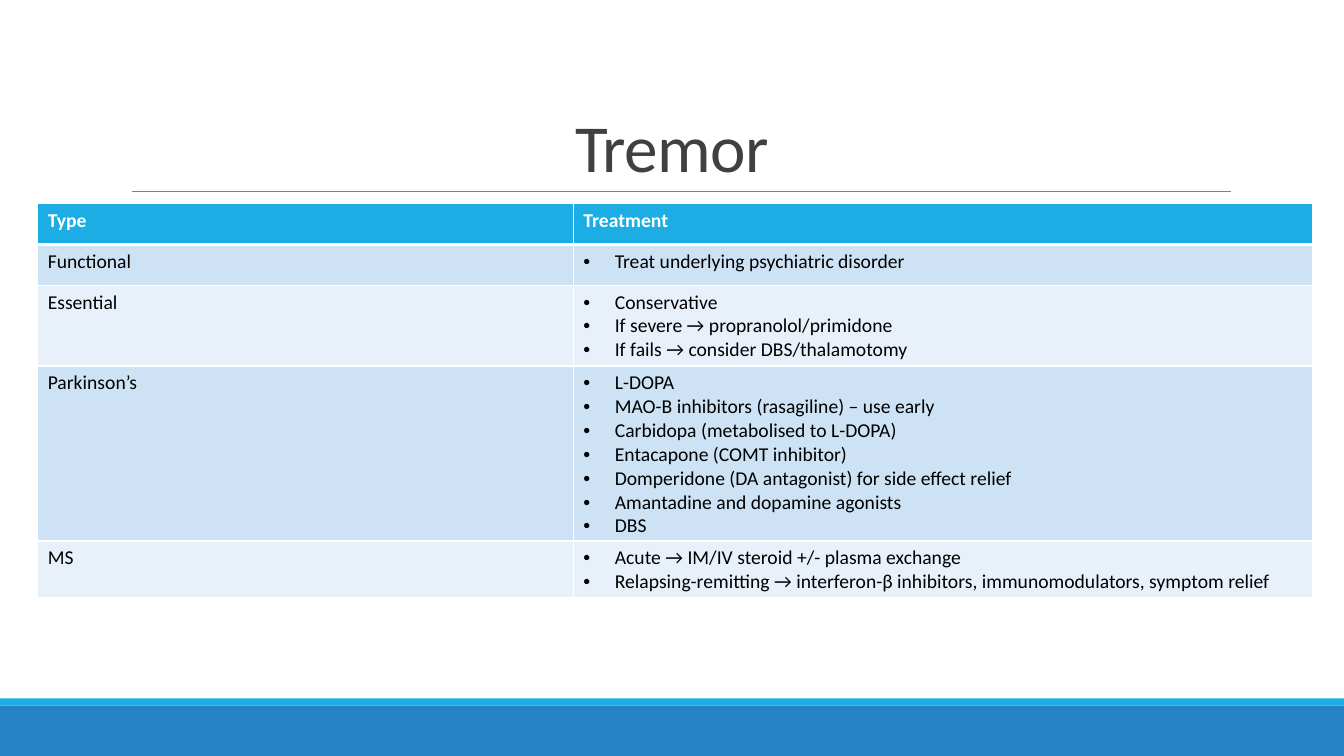
from dataclasses import dataclass

from pptx import Presentation
from pptx import util as u
from pptx.dml.color import RGBColor
from pptx.enum import shapes, text
from pptx.oxml.ns import qn
from lxml import etree


@dataclass
class Theme:
    font: str = "Calibri"
    title: int = 48
    body: int = 14
    dark: str = "404040"
    ink: str = "000000"
    pale: str = "FFFFFF"
    rule: str = "808080"
    head: str = "1CADE4"
    foot: str = "2683C6"
    bands: tuple = ("CDE3F5", "E8F1FA")


HEADS = ["Type", "Treatment"]
CARE = {
    "Functional": ["Treat underlying psychiatric disorder"],
    "Essential": [
        "Conservative",
        "If severe → propranolol/primidone",
        "If fails → consider DBS/thalamotomy",
    ],
    "Parkinson’s": [
        "L-DOPA",
        "MAO-B inhibitors (rasagiline) – use early",
        "Carbidopa (metabolised to L-DOPA)",
        "Entacapone (COMT inhibitor)",
        "Domperidone (DA antagonist) for side effect relief",
        "Amantadine and dopamine agonists",
        "DBS",
    ],
    "MS": [
        "Acute → IM/IV steroid +/- plasma exchange",
        "Relapsing-remitting → interferon-β inhibitors, immunomodulators, symptom relief",
    ],
}


def color(code):
    return RGBColor.from_string(code)


def add(parent, tag, **attrs):
    return etree.SubElement(parent, qn(tag), attrs)


def write(frame, lines, font, size, ink, bold=False, align=None,
          space=None, track=None, bullet=False):
    """Put one paragraph per line; track is letter spacing in 1/100 pt."""
    for i, line in enumerate(lines):
        para = frame.add_paragraph() if i else frame.paragraphs[0]
        para.alignment = align
        para.line_spacing = space
        run = para.add_run()
        run.text = line
        run.font.name, run.font.size = font, u.Pt(size)
        run.font.bold, run.font.color.rgb = bold, color(ink)
        if track:
            run.font._element.set("spc", str(track))
        if bullet:
            props = para._p.get_or_add_pPr()
            dent = u.Cm(0.79)
            props.set("marL", str(dent))
            props.set("indent", str(-dent))
            add(props, "a:buFont", typeface="Arial")
            add(props, "a:buChar", char="•")


def border(cell, ink, top, low):
    """Draw all four sides; top and low are widths in points."""
    props = cell._tc.get_or_add_tcPr()
    for side, width in zip("LRTB", (1, 1, top, low)):
        line = add(props, f"a:ln{side}", w=str(u.Pt(width)))
        add(add(line, "a:solidFill"), "a:srgbClr", val=ink)


class Page:
    def __init__(self, deck, theme):
        self.theme = theme
        self.slide = deck.slides.add_slide(deck.slide_layouts[6])
        self.shapes = self.slide.shapes

    def bar(self, left, top, width, height, fill):
        box = self.shapes.add_shape(
            shapes.MSO_SHAPE.RECTANGLE,
            u.Cm(left), u.Cm(top), u.Cm(width), u.Cm(height))
        box.shadow.inherit = False
        box.fill.solid()
        box.fill.fore_color.rgb = color(fill)
        box.line.fill.background()

    def rule(self, left, right, top):
        line = self.shapes.add_connector(
            shapes.MSO_CONNECTOR.STRAIGHT,
            u.Cm(left), u.Cm(top), u.Cm(right), u.Cm(top))
        line.line.color.rgb = color(self.theme.rule)
        line.line.width = u.Pt(0.5)
        add(line._element.spPr, "a:effectLst")

    def title(self, words, left, top, width, height):
        box = self.shapes.add_textbox(
            u.Cm(left), u.Cm(top), u.Cm(width), u.Cm(height))
        frame = box.text_frame
        frame.word_wrap = True
        frame.vertical_anchor = text.MSO_ANCHOR.BOTTOM
        write(frame, [words], self.theme.font, self.theme.title,
              self.theme.dark, align=text.PP_ALIGN.CENTER,
              space=0.85, track=-50)

    def cell(self, cell, lines, row, bullet):
        look = self.theme
        head = row == 0
        border(cell, look.pale, top=3 if row == 1 else 1, low=3 if head else 1)
        cell.fill.solid()
        fill = look.head if head else look.bands[(row - 1) % 2]
        cell.fill.fore_color.rgb = color(fill)
        write(cell.text_frame, lines, look.font, look.body,
              look.pale if head else look.ink, bold=head, bullet=bullet)

    def table(self, heads, data, left, top, widths, height):
        rows = [[[head] for head in heads]]
        rows += [[[kind], steps] for kind, steps in data.items()]
        grid = self.shapes.add_table(
            len(rows), len(widths), u.Cm(left), u.Cm(top),
            u.Cm(sum(widths)), u.Cm(height * len(rows))).table
        for col, width in zip(grid.columns, widths):
            col.width = u.Cm(width)
        for r, row in enumerate(rows):
            for c, lines in enumerate(row):
                self.cell(grid.cell(r, c), lines, r, bullet=r > 0 and c == 1)


def main():
    deck = Presentation()
    wide, high = 33.87, 19.05
    deck.slide_width, deck.slide_height = u.Cm(wide), u.Cm(high)
    theme = Theme()
    page = Page(deck, theme)
    page.bar(0, 17.78, wide, 1.27, theme.foot)
    page.bar(0, 17.6, wide, 0.18, theme.head)
    page.rule(3.33, 31.01, 4.83)
    page.title("Tremor", 4.52, 0.79, 24.82, 4.04)
    page.table(HEADS, CARE, 0.95, 5.13, [13.5, 18.63], 1.03)
    deck.save("out.pptx")


if __name__ == "__main__":
    main()
